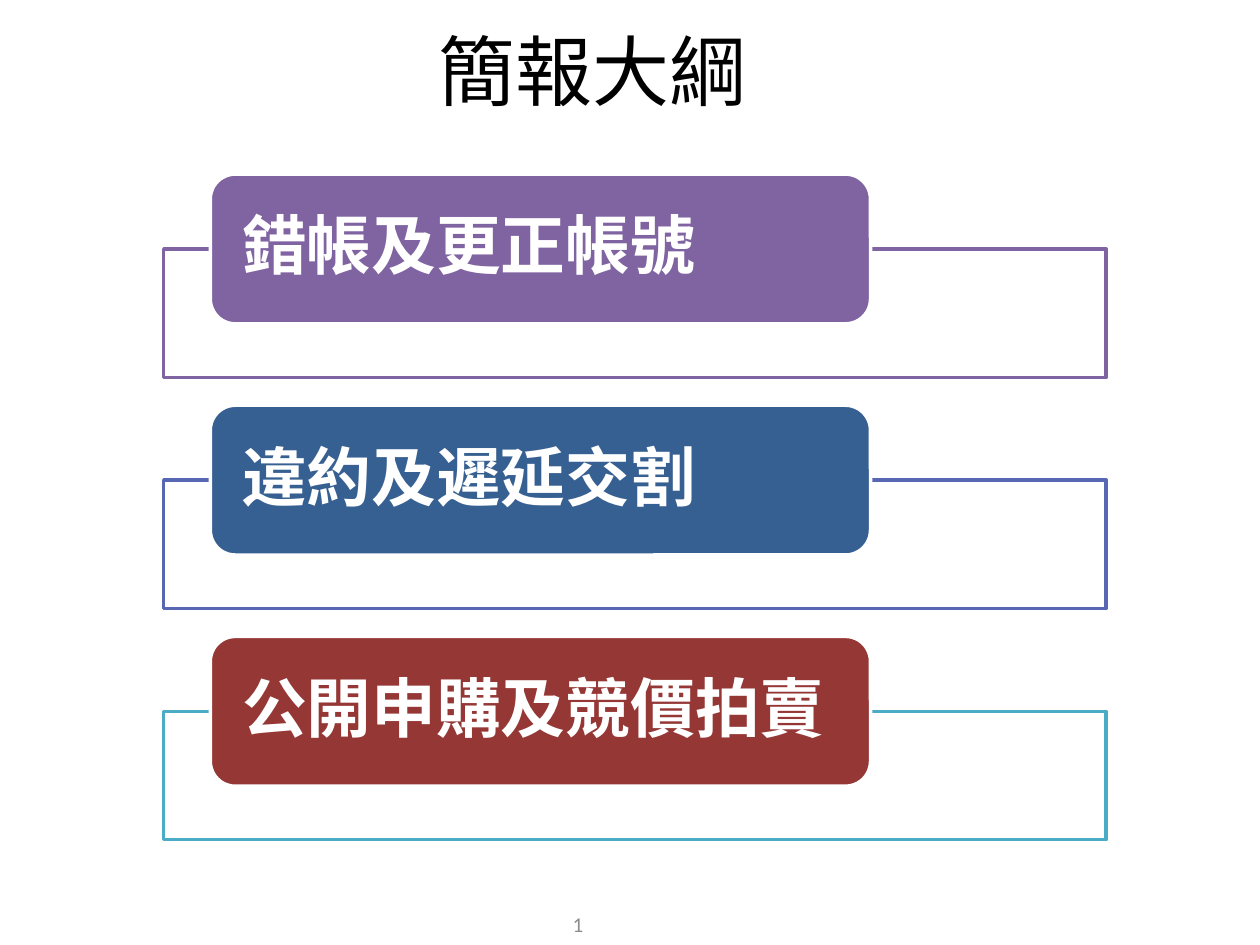
from lxml.etree import SubElement
from pptx import Presentation
from pptx.dml.color import RGBColor
from pptx.enum.shapes import MSO_SHAPE
from pptx.enum.text import MSO_ANCHOR, PP_ALIGN
from pptx.oxml.ns import qn
from pptx.util import Cm, Pt

WHITE = RGBColor(0xFF, 0xFF, 0xFF)
BLACK = RGBColor(0x00, 0x00, 0x00)
GRAY = RGBColor(0x8C, 0x8C, 0x8C)
PURPLE = RGBColor(0x80, 0x64, 0xA2)
INDIGO = RGBColor(0x57, 0x67, 0xB4)
BLUE = RGBColor(0x37, 0x60, 0x92)
TEAL = RGBColor(0x4B, 0xAC, 0xC6)
RED = RGBColor(0x95, 0x37, 0x35)

CJK_FONT = "Noto Sans CJK SC"
LATIN_FONT = "Calibri"

# Topic, label colour, frame colour
TOPICS = [
    ("錯帳及更正帳號", PURPLE, PURPLE),
    ("違約及遲延交割", BLUE, INDIGO),
    ("公開申購及競價拍賣", RED, TEAL),
]
FIRST_TOP = 3.51
PITCH = 4.66
FRAME_OFFSET = 1.51


def write_text(shape, text, size, color, font_name, align, bold=False):
    frame = shape.text_frame
    frame.word_wrap = True
    frame.vertical_anchor = MSO_ANCHOR.MIDDLE
    paragraph = frame.paragraphs[0]
    paragraph.text = text
    paragraph.alignment = align
    font = paragraph.font
    font.size = Pt(size)
    font.bold = bold
    font.color.rgb = color
    font.name = font_name
    # East Asian characters take their own typeface
    properties = paragraph._p.pPr.find(qn("a:defRPr"))
    SubElement(properties, qn("a:ea")).set("typeface", font_name)
    return paragraph


def add_text(slide, left, top, width, height, text, size, color, font_name):
    box = slide.shapes.add_textbox(Cm(left), Cm(top), Cm(width), Cm(height))
    write_text(box, text, size, color, font_name, PP_ALIGN.CENTER)


def add_box(slide, kind, left, top, width, height, fill, line):
    shape = slide.shapes.add_shape(kind, Cm(left), Cm(top), Cm(width), Cm(height))
    shape.shadow.inherit = False
    shape.fill.solid()
    shape.fill.fore_color.rgb = fill
    shape.line.color.rgb = line
    shape.line.width = Pt(2)
    return shape


def add_topic(slide, top, text, label_color, frame_color):
    # Outlined frame behind the label
    add_box(slide, MSO_SHAPE.RECTANGLE, 3.3, top + FRAME_OFFSET, 19, 2.59,
            WHITE, frame_color)
    # Rounded label
    label = add_box(slide, MSO_SHAPE.ROUNDED_RECTANGLE, 4.24, top, 13.31, 3.02,
                    label_color, WHITE)
    frame = label.text_frame
    frame.margin_left = frame.margin_right = Cm(0.5)
    frame.margin_top = frame.margin_bottom = 0
    paragraph = write_text(label, text, 37, WHITE, CJK_FONT, PP_ALIGN.LEFT, bold=True)
    paragraph.line_spacing = 0.9


def main():
    presentation = Presentation()
    presentation.slide_width = Cm(25.4)
    presentation.slide_height = Cm(19.05)
    slide = presentation.slides.add_slide(presentation.slide_layouts[6])

    # Title
    add_text(slide, 0.51, 0.3, 22.86, 2.21, "簡報大綱", 44, BLACK, CJK_FONT)

    # Topics at an even pitch
    for index, topic in enumerate(TOPICS):
        add_topic(slide, FIRST_TOP + index * PITCH, *topic)

    # Page number
    add_text(slide, 8.69, 18.11, 5.92, 1.02, "1", 12, GRAY, LATIN_FONT)

    presentation.save("out.pptx")


if __name__ == "__main__":
    main()
